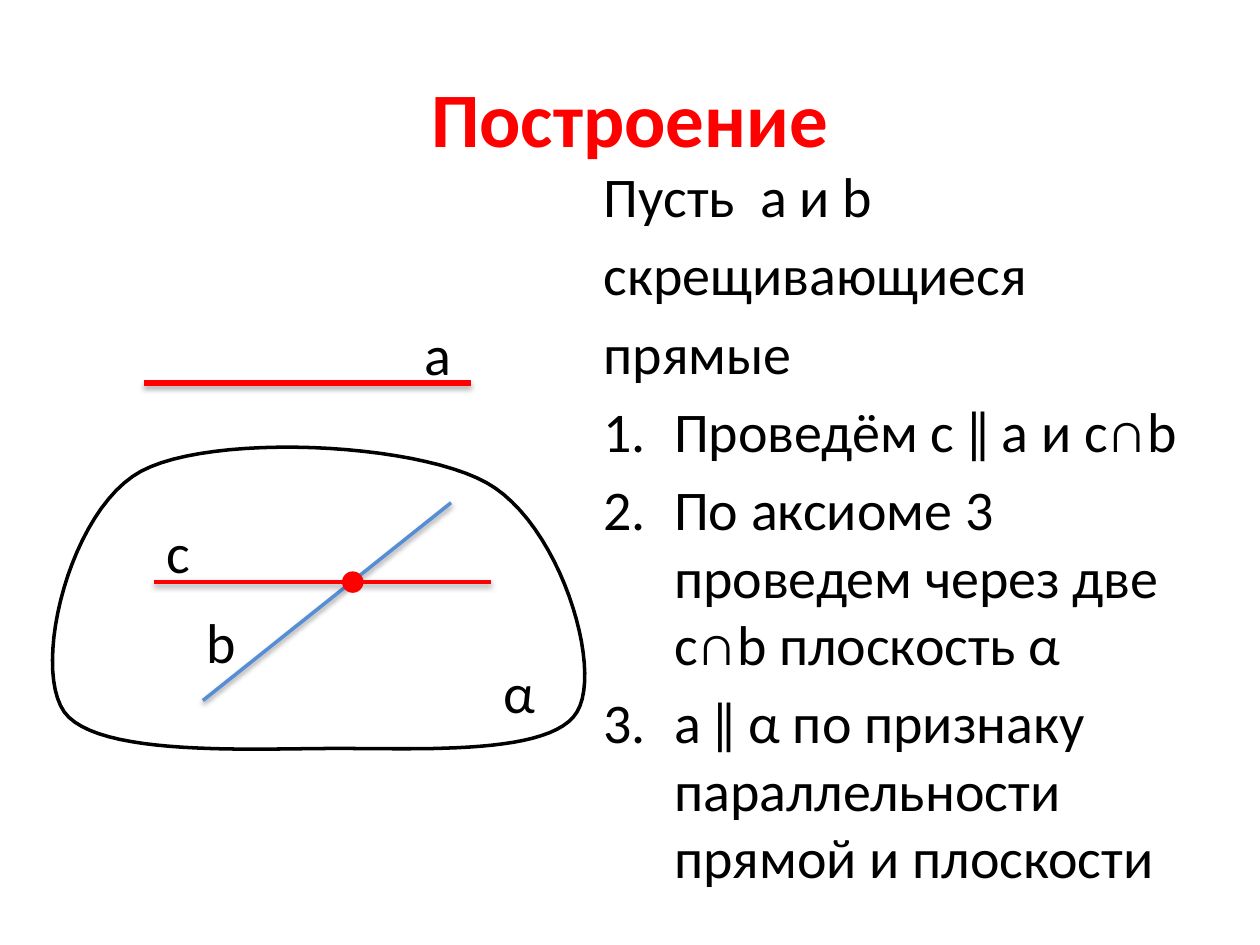
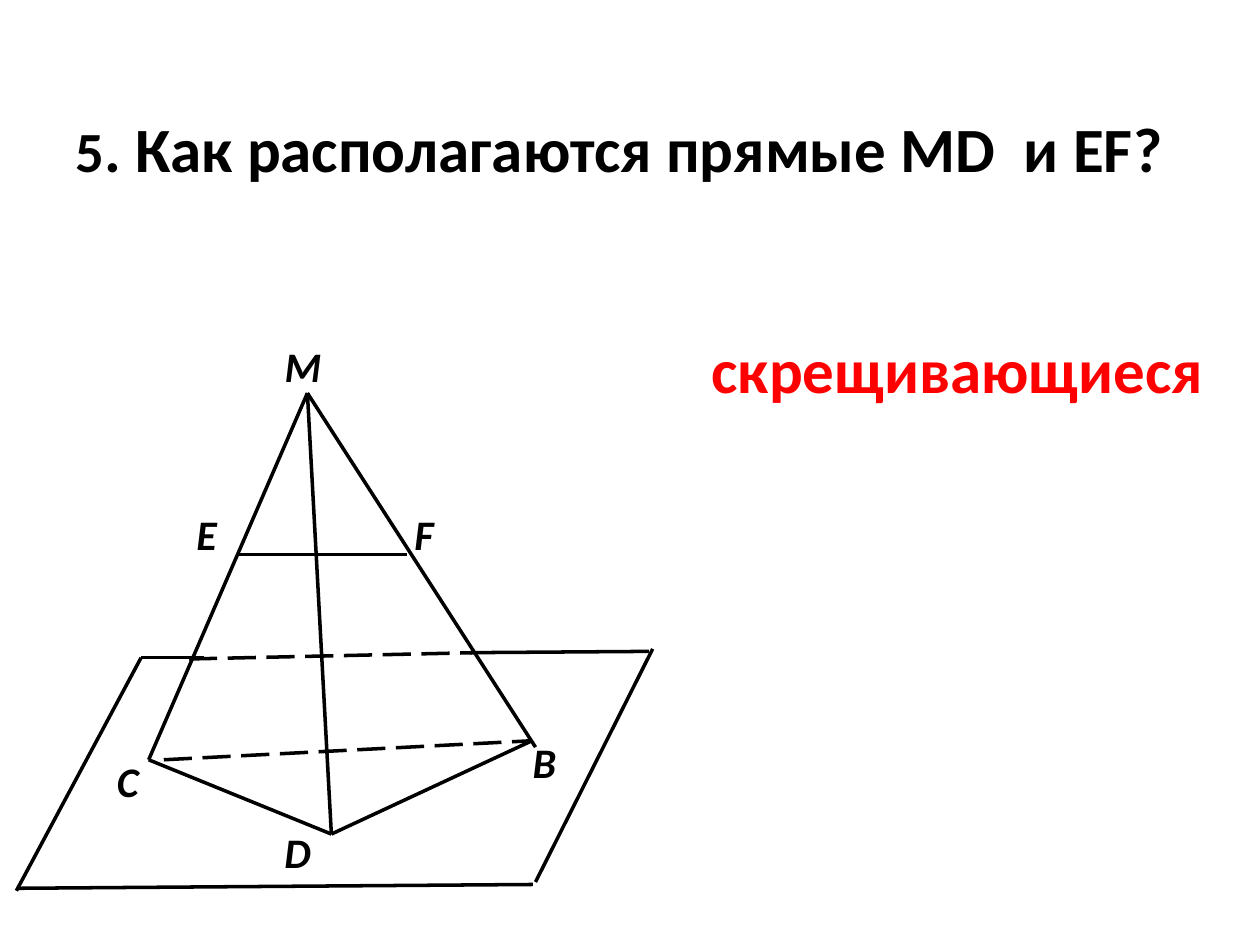
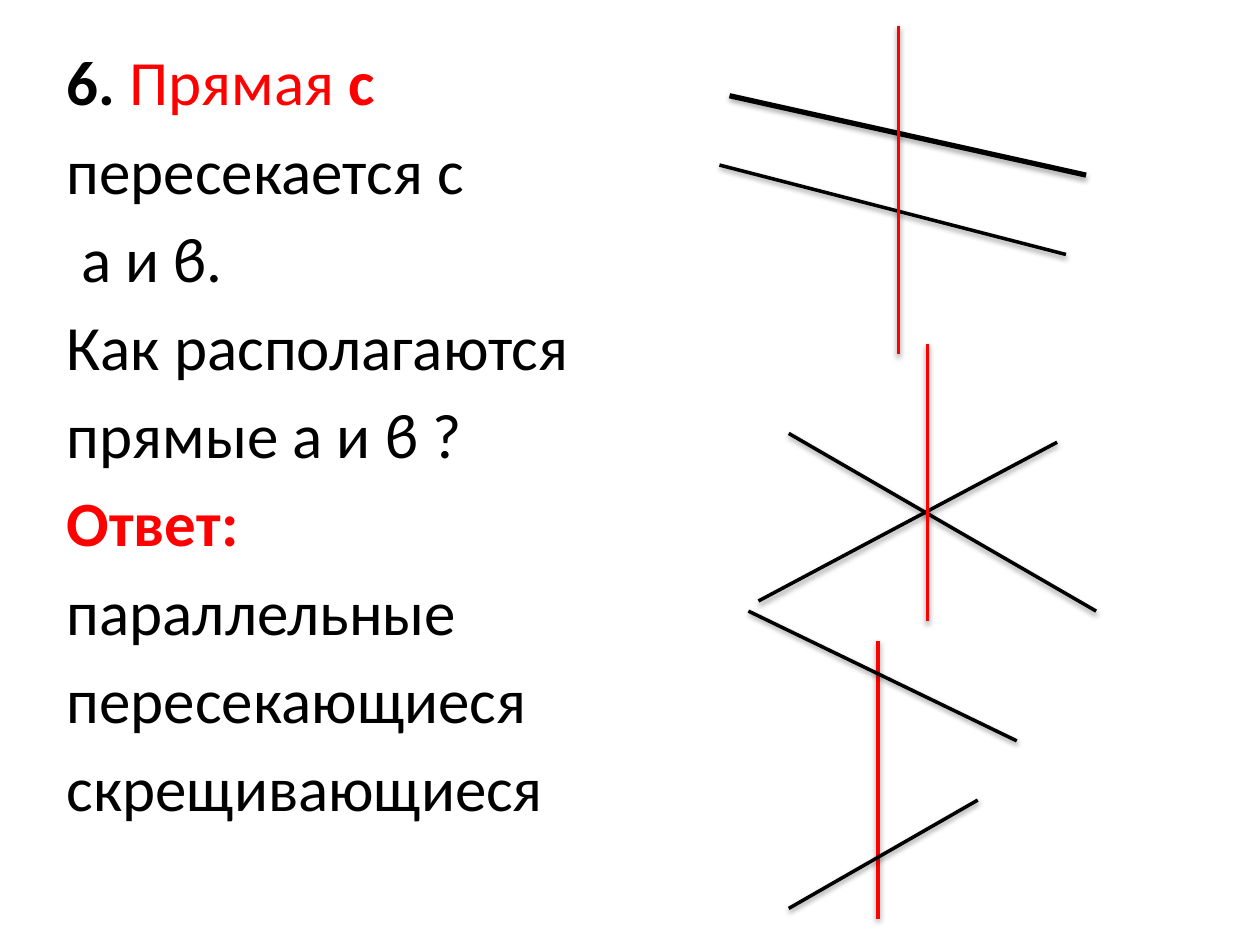
from lxml import etree
from pptx import Presentation
from pptx import util as u
from pptx.dml.color import RGBColor
from pptx.enum import dml, shapes, text
from pptx.oxml import ns

COLORS = {"ink": "000000", "accent": "FF0000", "blue": "558ED5"}
RGB = {name: RGBColor.from_string(value) for name, value in COLORS.items()}
FONT = "Calibri"


def style(font, size, color="ink", bold=False, italic=False):
    font.name, font.size = FONT, u.Pt(size)
    font.color.rgb = RGB[color]
    font.bold, font.italic = bold, italic


def add_line(slide, start, end, color="ink", width=2, shadow=False, dashed=False):
    line = slide.shapes.add_connector(
        shapes.MSO_CONNECTOR.STRAIGHT, *[u.Inches(v) for v in (*start, *end)])
    line.line.color.rgb = RGB[color]
    line.line.width = u.Pt(width)
    if dashed:
        line.line.dash_style = dml.MSO_LINE.LONG_DASH
    effects = etree.SubElement(line._element.spPr, ns.qn("a:effectLst"))
    if shadow:
        distance, alpha = (23000, 35000) if width == 3 else (20000, 38000)
        outer = etree.SubElement(effects, ns.qn("a:outerShdw"), blurRad="40000",
                                 dist=str(distance), dir="5400000", rotWithShape="0")
        black = etree.SubElement(outer, ns.qn("a:srgbClr"), val=COLORS["ink"])
        etree.SubElement(black, ns.qn("a:alpha"), val=str(alpha))


prs = Presentation()
prs.slide_width, prs.slide_height = u.Inches(10), u.Inches(7.5)
construction, pyramid, crossings = [
    prs.slides.add_slide(prs.slide_layouts[n]) for n in (1, 5, 1)]

# Titles
for slide, runs, color, align, anchor in (
    (construction, (("Построение", 44),), "accent",
     text.PP_ALIGN.CENTER, text.MSO_ANCHOR.MIDDLE),
    (pyramid, (("5", 32.4), (". Как располагаются прямые МD  и EF?", 36)), "ink",
     text.PP_ALIGN.LEFT, text.MSO_ANCHOR.BOTTOM),
):
    title = slide.shapes.title
    title.left, title.top, title.width, title.height = [
        u.Inches(v) for v in (0.5, 0.3, 9, 1.25)]
    frame = title.text_frame
    frame.vertical_anchor = anchor
    frame.margin_bottom = u.Inches(0.02 if slide is pyramid else 0.05)
    frame.auto_size = text.MSO_AUTO_SIZE.NONE
    frame.paragraphs[0].alignment = align
    if slide is pyramid:
        frame.margin_bottom = u.Inches(0.08)
    for wording, size in runs:
        run = frame.paragraphs[0].add_run()
        run.text = wording
        style(run.font, size, color, bold=True)

crossings.shapes.title._element.getparent().remove(crossings.shapes.title._element)

# Body texts: (wording, colour, bold, numbered)
steps = [(line, "ink", False, False) for line in ("Пусть  а и b", "скрещивающиеся", "прямые")]
steps += [(line, "ink", False, True) for line in (
    "Проведём с ǁ а и с∩b",
    "По аксиоме 3 проведем через две с∩b плоскость α",
    "а ǁ α по признаку параллельности прямой и плоскости")]
answers = [(line, "accent" if line == "Ответ:" else "ink", line == "Ответ:", False) for line in (
    "", "пересекается с", " а и ϐ.", "Как располагаются", "прямые а и ϐ ?", "Ответ:",
    "параллельные", "пересекающиеся", "скрещивающиеся")]

for slide, place, size, lines in (
    (construction, (4.69, 1.23, 4.81, 5.98), 32, steps),
    (crossings, (0.43, 0.29, 4.48, 7.21), 36, answers),
):
    body = slide.placeholders[1]
    body.left, body.top, body.width, body.height = [u.Inches(v) for v in place]
    frame = body.text_frame
    frame.auto_size = text.MSO_AUTO_SIZE.NONE
    frame.text = "\n".join(line[0] for line in lines)
    for paragraph, (_, color, bold, numbered) in zip(frame.paragraphs, lines):
        props = paragraph._p.get_or_add_pPr()
        indent = u.Inches(0.56 if numbered else 0.38)
        props.set("marL", str(indent))
        props.set("indent", str(-indent))
        if numbered:
            etree.SubElement(props, ns.qn("a:buFont"), typeface="+mj-lt")
            etree.SubElement(props, ns.qn("a:buAutoNum"), type="arabicPeriod")
        else:
            etree.SubElement(props, ns.qn("a:buNone"))
        style(paragraph.font, size, color, bold)

# The first line of the last question mixes colours
condition = crossings.placeholders[1].text_frame.paragraphs[0]
for wording, color, bold in (("6.", "ink", True), (" Прямая ", "accent", False),
                             ("с", "accent", True)):
    run = condition.add_run()
    run.text = wording
    style(run.font, 36, color, bold)

# Lines a, b and c of the construction
for start, end, color, width in (
    ((1.14, 3.04), (3.74, 3.04), "accent", 3),
    ((3.58, 3.99), (1.61, 5.56), "blue", 2),
    ((1.22, 4.62), (3.9, 4.62), "accent", 2),
):
    add_line(construction, start, end, color, width, shadow=True)

crossing_point = construction.shapes.add_shape(
    shapes.MSO_SHAPE.OVAL, *[u.Inches(v) for v in (2.72, 4.54, 0.16, 0.16)])
crossing_point.shadow.inherit = False
crossing_point.fill.solid()
crossing_point.fill.fore_color.rgb = RGB["accent"]
crossing_point.line.color.rgb = RGB["accent"]
crossing_point.line.width = u.Pt(0.75)

# Plane α: a closed outline sampled along Bézier curves
plane_start = (2.69, 5.94)
plane_curves = (
    ((2.01, 5.94), (0.77, 6.01), (0.51, 5.65)),
    ((0.25, 5.28), (0.56, 4.04), (1.12, 3.74)),
    ((1.68, 3.44), (3.28, 3.51), (3.86, 3.83)),
    ((4.44, 4.15), (4.79, 5.3), (4.58, 5.65)),
    ((4.38, 5.99), (3.37, 5.94), plane_start),
)
outline, corner = [], plane_start
for curve in plane_curves:
    for t in (step / 24 for step in range(1, 25)):
        weights = ((1 - t) ** 3, 3 * t * (1 - t) ** 2, 3 * t * t * (1 - t), t ** 3)
        outline.append([u.Inches(sum(w * p[axis] for w, p in zip(weights, (corner, *curve))))
                        for axis in (0, 1)])
    corner = curve[-1]
builder = construction.shapes.build_freeform(*outline[-1])
builder.add_line_segments(outline[:-1], close=True)
plane = builder.convert_to_shape()
plane.shadow.inherit = False
plane.fill.background()
plane.line.color.rgb = RGB["ink"]
plane.line.width = u.Pt(2)

# Pyramid MCDB, its midline EF and the base plane
M, C, D, B = (2.44, 3.12), (1.18, 6.03), (2.63, 6.62), (4.22, 5.88)
for start, end in (
    (C, M), (M, (4.25, 5.93)), (D, B), (M, D), (C, D),
    ((1.88, 4.4), (3.23, 4.4)),
    ((4.25, 7), (5.18, 5.15)), ((0.13, 7.05), (4.23, 7.02)),
    ((0.13, 7.07), (1.12, 5.22)), ((1.12, 5.22), (1.62, 5.22)),
    ((3.73, 5.18), (5.15, 5.17)),
):
    add_line(pyramid, start, end)
for start, end in (((1.5, 5.23), (3.77, 5.18)), ((1.3, 6.03), (4.2, 5.88))):
    add_line(pyramid, start, end, dashed=True)

# Parallel, intersecting and skew lines, each cut by line c
for start, end, color, width in (
    ((5.79, 0.76), (8.62, 1.39), "ink", 3),
    ((5.71, 1.31), (8.46, 2.02), "ink", 2),
    ((7.13, 0.21), (7.13, 2.81), "accent", 2),
    ((6.26, 3.44), (8.7, 4.85), "ink", 2),
    ((8.39, 3.51), (6.02, 4.77), "ink", 2),
    ((7.36, 2.73), (7.36, 4.93), "accent", 2),
    ((6.97, 5.09), (6.97, 7.29), "accent", 2),
    ((6.26, 7.21), (7.76, 6.35), "ink", 2),
    ((5.94, 4.85), (8.07, 5.88), "ink", 2),
):
    add_line(crossings, start, end, color, width, shadow=True)

# Letters on the drawings and the answer: size, colour, bold, italic, then places
for slide, height, look, labels in (
    (construction, 0.64, (32, "ink", False, False), (
        ("а", 3.27, 2.49, 0.71), ("b", 1.54, 4.77, 0.44),
        ("с", 1.22, 4.06, 0.63), ("α", 3.9, 5.17, 0.47))),
    (pyramid, 0.5, (24, "ink", True, True), (
        ("D", 2.16, 6.51, 0.44), ("С", 0.83, 5.95, 0.44), ("M", 2.16, 2.65, 0.48),
        ("E", 1.46, 3.99, 0.42), ("F", 3.19, 3.99, 0.4), ("В", 4.13, 5.8, 0.44))),
    (pyramid, 0.71, (36, "accent", True, False), (("скрещивающиеся", 5.55, 2.57, 4.14),)),
):
    for wording, left, top, width in labels:
        label = slide.shapes.add_textbox(*[u.Inches(v) for v in (left, top, width, height)])
        label.text_frame.word_wrap = True
        label.text_frame.text = wording
        style(label.text_frame.paragraphs[0].font, *look)

prs.save("out.pptx")
